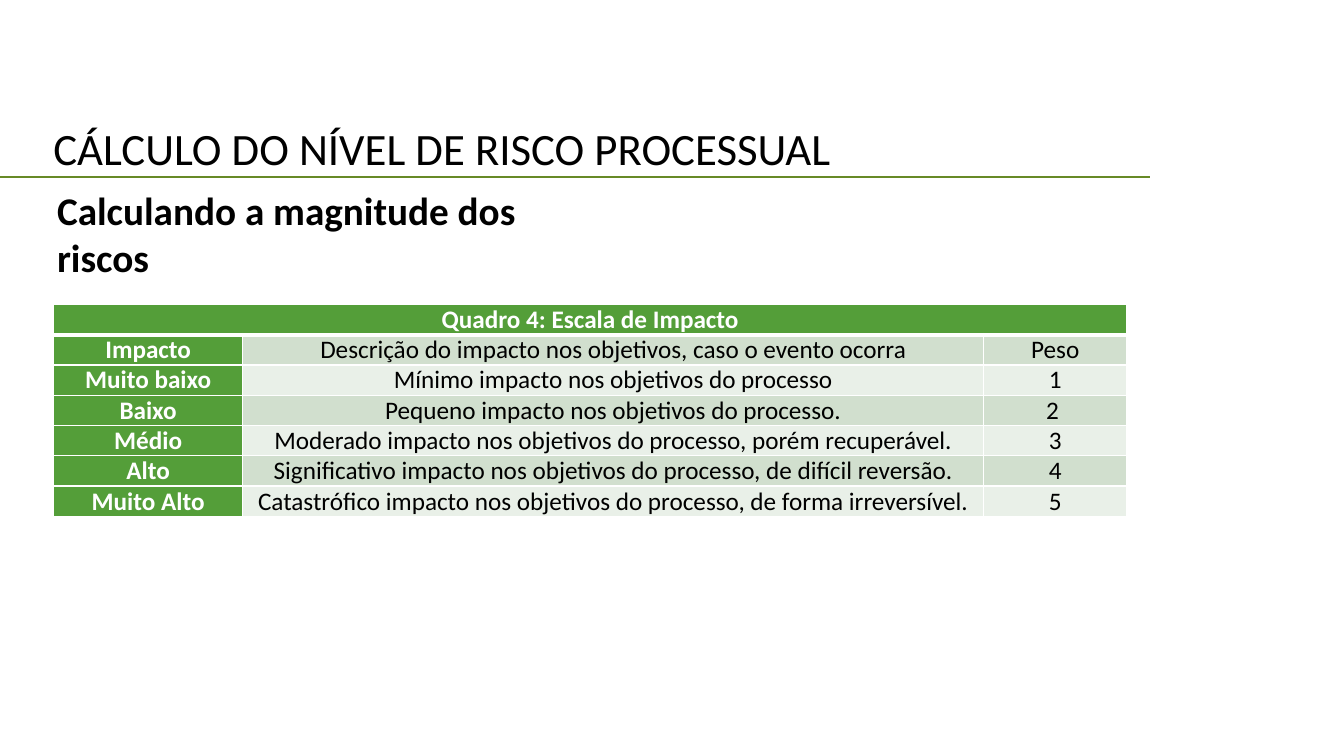
"""Builds the slide on the impact scale of process risks."""
from lxml.etree import SubElement
from pptx import Presentation
from pptx.dml.color import RGBColor
from pptx.enum.shapes import MSO_CONNECTOR
from pptx.enum.text import MSO_ANCHOR, MSO_AUTO_SIZE, PP_ALIGN
from pptx.oxml.ns import qn
from pptx.util import Cm, Pt

TITLE = "CÁLCULO DO NÍVEL DE RISCO PROCESSUAL"
SUBTITLE = "Calculando a magnitude dos riscos"
CAPTION = "Quadro 4: Escala de Impacto"
SCALE = [
    ("Impacto", "Descrição do impacto nos objetivos, caso o evento ocorra", "Peso"),
    ("Muito baixo", "Mínimo impacto nos objetivos do processo", "1"),
    ("Baixo", "Pequeno impacto nos objetivos do processo.", "2 "),
    ("Médio", "Moderado impacto nos objetivos do processo, porém recuperável.", "3"),
    ("Alto", "Significativo impacto nos objetivos do processo, de difícil reversão.", "4"),
    ("Muito Alto", "Catastrófico impacto nos objetivos do processo, de forma irreversível.", "5"),
]
COLUMN_WIDTHS = [Cm(4.77), Cm(18.67), Cm(3.61)]
ROW_HEIGHT = Cm(0.76)
GREEN, WHITE, BLACK, RULE_GREEN = "549E39", "FFFFFF", "000000", "678A26"
BANDS = ["D1DFCE", "E9F0E8"]


def color(hex_code):
    return RGBColor.from_string(hex_code)


def write(frame, wording, size, hex_code, bold, align=PP_ALIGN.LEFT):
    frame.text = wording
    paragraph = frame.paragraphs[0]
    paragraph.alignment = align
    font = paragraph.runs[0].font
    font.name, font.size, font.bold = "Calibri", Pt(size), bold
    font.color.rgb = color(hex_code)


def draw_borders(cell, bottom_width):
    properties = cell._tc.get_or_add_tcPr()
    for side, width in (("L", 1), ("R", 1), ("T", 1), ("B", bottom_width)):
        border = SubElement(properties, qn(f"a:ln{side}"), w=str(Pt(width)))
        fill = SubElement(border, qn("a:solidFill"))
        SubElement(fill, qn("a:srgbClr"), val=WHITE)


def format_cell(cell, wording, fill, bold, bottom_width=1):
    draw_borders(cell, bottom_width)
    cell.fill.solid()
    cell.fill.fore_color.rgb = color(fill)
    cell.vertical_anchor = MSO_ANCHOR.MIDDLE
    cell.margin_left = cell.margin_right = Cm(0.18)
    cell.margin_top = cell.margin_bottom = 0
    if wording:
        write(cell.text_frame, wording, 18, WHITE if bold else BLACK, bold, PP_ALIGN.CENTER)


def add_scale(slide):
    row_count = len(SCALE) + 1
    table = slide.shapes.add_table(
        row_count, len(COLUMN_WIDTHS), Cm(1.35), Cm(7.67),
        sum(COLUMN_WIDTHS), ROW_HEIGHT * row_count).table
    for column, width in zip(table.columns, COLUMN_WIDTHS):
        column.width = width
    for row in table.rows:
        row.height = ROW_HEIGHT
    table.cell(0, 0).merge(table.cell(0, len(COLUMN_WIDTHS) - 1))
    for cell, wording in zip(table.rows[0].cells, (CAPTION, "", "")):
        format_cell(cell, wording, GREEN, True, 3)
    for level, entries in enumerate(SCALE):
        for position, wording in enumerate(entries):
            heading = position == 0
            fill = GREEN if heading else BANDS[level % 2]
            format_cell(table.cell(level + 1, position), wording, fill, heading)


def main():
    deck = Presentation()
    deck.slide_width, deck.slide_height = Cm(33.87), Cm(19.05)
    slide = deck.slides.add_slide(deck.slide_layouts[5])

    rule = slide.shapes.add_connector(
        MSO_CONNECTOR.STRAIGHT, 0, Cm(4.45), Cm(28.98), Cm(4.45))
    rule.line.color.rgb = color(RULE_GREEN)
    rule.line.width = Pt(1.5)
    SubElement(rule._element.spPr, qn("a:effectLst"))

    title = slide.shapes.title
    title.left, title.top, title.width, title.height = Cm(1.09), Cm(2.92), Cm(25.37), Cm(1.63)
    title.text_frame.auto_size = MSO_AUTO_SIZE.NONE
    title.text_frame.vertical_anchor = MSO_ANCHOR.TOP
    write(title.text_frame, TITLE, 32, BLACK, False)

    subtitle = slide.shapes.add_textbox(Cm(1.19), Cm(4.57), Cm(14.05), Cm(2.65))
    subtitle.text_frame.word_wrap = True
    write(subtitle.text_frame, SUBTITLE, 28, BLACK, True)

    add_scale(slide)
    deck.save("out.pptx")


if __name__ == "__main__":
    main()
